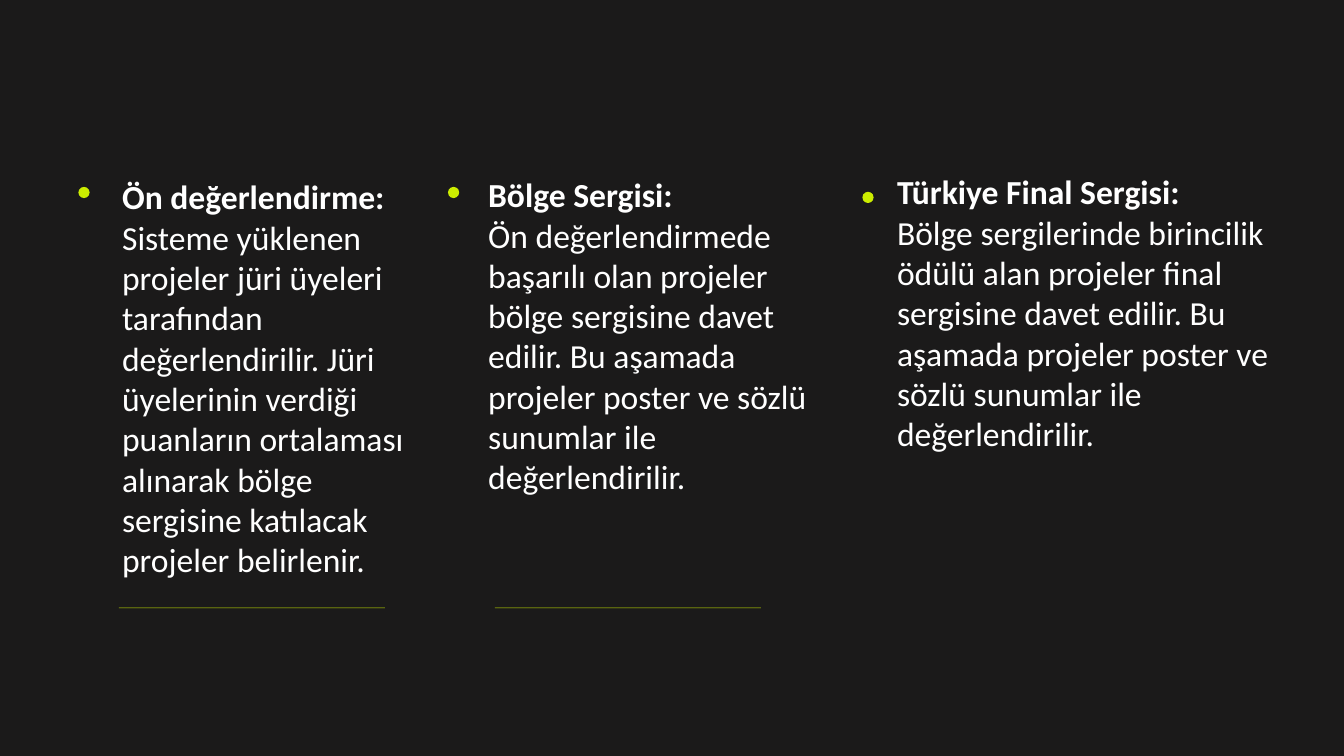
import pptx
import pptx.dml.color
import pptx.enum.shapes
import pptx.enum.text
import pptx.util

RGBColor = pptx.dml.color.RGBColor
SHAPE = pptx.enum.shapes.MSO_SHAPE

BACKGROUND = RGBColor(0x1B, 0x1A, 0x1A)
LIME = RGBColor(0xCC, 0xED, 0x00)
WHITE = RGBColor(0xFF, 0xFF, 0xFF)

EMU_PER_PX = 9525
DOT_SIZE = 16
RULE_TOP, RULE_WIDTH = 868, 380

# Each stage: dot (left, top), text box (left, top, width, height), heading, body
STAGES = [
    ((112, 267), (165, 247, 450, 591), "Ön değerlendirme:", [
        "Sisteme yüklenen projeler jüri üyeleri tarafından değerlendirilir. "
        "Jüri üyelerinin verdiği puanların ortalaması alınarak bölge "
        "sergisine katılacak projeler belirlenir.",
    ]),
    ((640, 267), (688, 244, 520, 475), "Bölge Sergisi:", [
        "Ön değerlendirmede başarılı olan projeler bölge sergisine davet",
        "edilir. Bu aşamada projeler poster ve sözlü sunumlar ile "
        "değerlendirilir.",
    ]),
    ((1232, 274), (1272, 240, 552, 417), "Türkiye Final Sergisi:", [
        "Bölge sergilerinde birincilik ödülü alan projeler final",
        "sergisine davet edilir. Bu aşamada projeler poster ve sözlü "
        "sunumlar ile",
        "değerlendirilir.",
    ]),
]
RULE_LEFTS = [170, 707]


def px(*lengths):
    return [pptx.util.Emu(n * EMU_PER_PX) for n in lengths]


class Deck:
    font = "Calibri"
    size = pptx.util.Pt(36)

    def __init__(self, width, height):
        self.prs = pptx.Presentation()
        self.prs.slide_width, self.prs.slide_height = px(width, height)

    def add_slide(self):
        self.s = self.prs.slides.add_slide(self.prs.slide_layouts[6])
        fill = self.s.background.fill
        fill.solid()
        fill.fore_color.rgb = BACKGROUND

    def shape(self, kind, *box):
        sp = self.s.shapes.add_shape(kind, *px(*box))
        sp.shadow.inherit = False
        sp.fill.solid()
        sp.fill.fore_color.rgb = LIME
        sp.line.fill.background()

    def dot(self, left, top):
        self.shape(SHAPE.OVAL, left, top, DOT_SIZE, DOT_SIZE)

    def rule(self, left):
        self.shape(SHAPE.RECTANGLE, left, RULE_TOP, RULE_WIDTH, 1)

    def text(self, box, heading, body):
        """Add a bold heading followed by plain paragraphs."""
        tf = self.s.shapes.add_textbox(*px(*box)).text_frame
        tf.word_wrap = True
        tf.auto_size = pptx.enum.text.MSO_AUTO_SIZE.SHAPE_TO_FIT_TEXT
        self.run(tf.paragraphs[0], heading, bold=True)
        for line in body:
            self.run(tf.add_paragraph(), line)

    def run(self, p, text, bold=False):
        r = p.add_run()
        r.text = text
        r.font.name = self.font
        r.font.size = self.size
        r.font.bold = bold
        r.font.color.rgb = WHITE


def main():
    deck = Deck(1920, 1080)
    deck.add_slide()
    for left in RULE_LEFTS:
        deck.rule(left)
    for dot, box, heading, body in STAGES:
        deck.dot(*dot)
        deck.text(box, heading, body)
    deck.prs.save("out.pptx")


if __name__ == "__main__":
    main()
